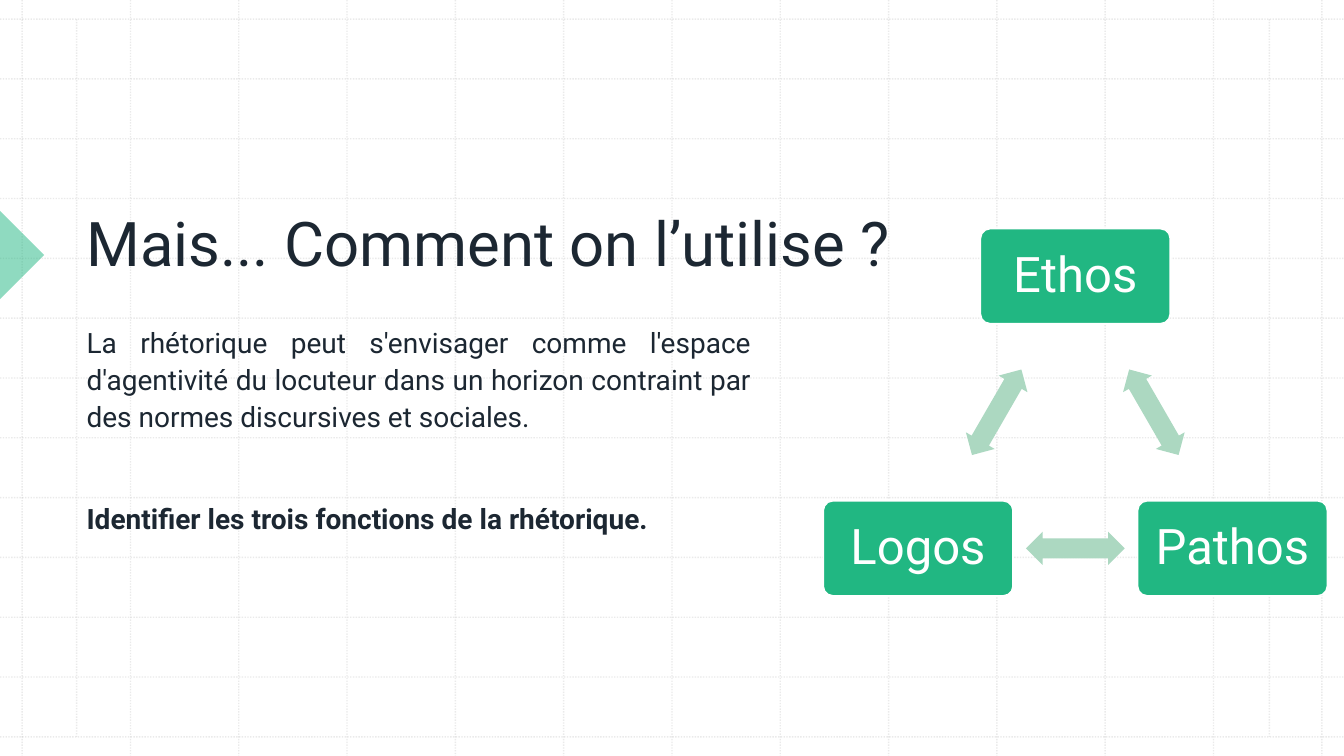
from dataclasses import dataclass
from math import cos, radians, sin

from lxml.etree import SubElement
from pptx import Presentation
from pptx.dml.color import RGBColor
from pptx.enum.dml import MSO_LINE
from pptx.enum.shapes import MSO_CONNECTOR, MSO_SHAPE
from pptx.enum.text import MSO_ANCHOR, PP_ALIGN
from pptx.oxml.ns import qn
from pptx.util import Inches, Pt


@dataclass(frozen=True)
class Theme:
    font: str = "Roboto"
    ink: str = "1C2732"
    white: str = "FFFFFF"
    green: str = "21B782"
    pale: str = "ACD8C1"
    grid: str = "BCBCBC"
    title: int = 44
    body: int = 20
    node: int = 35


THEME = Theme()


def fade(part, share):
    """Set the opacity, in percent, of every solid colour in a part."""
    for color in part._element.spPr.iter(qn("a:srgbClr")):
        SubElement(color, qn("a:alpha"), val=str(share * 1000))


def add_run(para, text, size, color, bold=False):
    run = para.add_run()
    run.text = text
    font = run.font
    font.name, font.size, font.bold = THEME.font, Pt(size), bold
    font.color.rgb = RGBColor.from_string(color)


def add_shape(slide, kind, box, color, turn=0):
    shape = slide.shapes.add_shape(kind, *map(Inches, box))
    shape.shadow.inherit = False
    shape.fill.solid()
    shape.fill.fore_color.rgb = RGBColor.from_string(color)
    shape.line.fill.background()
    shape.rotation = turn
    return shape


def add_frame(slide, box):
    frame = slide.shapes.add_textbox(*map(Inches, box)).text_frame
    frame.word_wrap = True
    return frame


def add_rule(slide, x1, y1, x2, y2):
    """Draw one faint dotted grid line."""
    rule = slide.shapes.add_connector(
        MSO_CONNECTOR.STRAIGHT, *map(Inches, (x1, y1, x2, y2)))
    rule.line.color.rgb = RGBColor.from_string(THEME.grid)
    rule.line.width = Pt(1)
    rule.line.dash_style = MSO_LINE.ROUND_DOT
    fade(rule, 30)
    SubElement(rule._element.spPr, qn("a:effectLst"))


def draw_grid(slide, box, count=12):
    left, top, width, height = box
    right, bottom = left + width, top + height
    side, edge = 0.22, 0.19
    col = (width - 2 * side) / count
    row = (height - 2 * edge) / count
    for i in range(count + 1):
        x, y = left + side + i * col, top + edge + i * row
        add_rule(slide, x, top, x, bottom)
        add_rule(slide, left, y, right, y)
    for x in (left + 0.76, right - 0.74):
        add_rule(slide, x, top + edge, x, bottom - edge)


def draw_mark(slide, box):
    mark = add_shape(slide, MSO_SHAPE.RIGHT_TRIANGLE, box, THEME.green, 225)
    fade(mark, 50)


def draw_title(slide, box, text):
    frame = add_frame(slide, box)
    frame.vertical_anchor = MSO_ANCHOR.BOTTOM
    add_run(frame.paragraphs[0], text, THEME.title, THEME.ink)


def draw_body(slide, box, lead, task):
    frame = add_frame(slide, box)
    parts = ((frame.paragraphs[0], lead, 10, False),
             (frame.add_paragraph(), task, 46, True))
    for para, text, gap, bold in parts:
        para.alignment = PP_ALIGN.JUSTIFY
        para.line_spacing = 1.1
        para.space_before = Pt(gap)
        add_run(para, text, THEME.body, THEME.ink, bold)


def draw_node(slide, box, text):
    node = add_shape(slide, MSO_SHAPE.ROUNDED_RECTANGLE, box, THEME.green)
    node.adjustments[0] = 0.1
    node.line.color.rgb = RGBColor.from_string(THEME.white)
    node.line.width = Pt(1)
    frame = node.text_frame
    frame.word_wrap = True
    frame.vertical_anchor = MSO_ANCHOR.MIDDLE
    frame.margin_left = frame.margin_right = Inches(0.15)
    frame.margin_top = frame.margin_bottom = Inches(0.15)
    para = frame.paragraphs[0]
    para.alignment = PP_ALIGN.CENTER
    para.line_spacing = 0.9
    add_run(para, text, THEME.node, THEME.white)


def draw_cycle(slide, box, names):
    """Place the nodes on a circle, with a two-way arrow between neighbours."""
    left, top, width, height = box
    wide, high = 1.88, 0.94
    long, thick = 0.98, 0.33
    step = 360 / len(names)
    radius = (height - high) / (1 + cos(radians(step / 2)))
    mid_x, mid_y = left + width / 2, top + high / 2 + radius

    def place(angle, reach, w, h):
        x = mid_x + reach * cos(radians(angle))
        y = mid_y + reach * sin(radians(angle))
        return x - w / 2, y - h / 2, w, h

    for i, name in enumerate(names):
        angle = i * step - 90
        draw_node(slide, place(angle, radius, wide, high), name)
        half = angle + step / 2
        spot = place(half, radius * cos(radians(step / 2)), long, thick)
        arrow = add_shape(slide, MSO_SHAPE.LEFT_RIGHT_ARROW, spot,
                          THEME.pale, half + 90)
        arrow.adjustments[0] = 0.6
        arrow.adjustments[1] = 0.5


def main():
    deck = Presentation()
    deck.slide_width, deck.slide_height = Inches(13.33), Inches(7.5)
    slide = deck.slides.add_slide(deck.slide_layouts[6])
    draw_grid(slide, (0, 0, 13.33, 7.5))
    draw_mark(slide, (-0.31, 2.22, 0.62, 0.62))
    draw_title(slide, (0.76, 0.79, 11.85, 2.02),
               "Mais... Comment on l’utilise ?")
    draw_body(slide, (0.76, 3.15, 6.79, 3.56),
              "La rhétorique peut s'envisager comme l'espace d'agentivité "
              "du locuteur dans un horizon contraint par des normes "
              "discursives et sociales.",
              "Identifier les trois fonctions de la rhétorique.")
    draw_cycle(slide, (8.17, 2.27, 4.99, 3.64), ("Ethos", "Pathos", "Logos"))
    deck.save("out.pptx")


if __name__ == "__main__":
    main()
